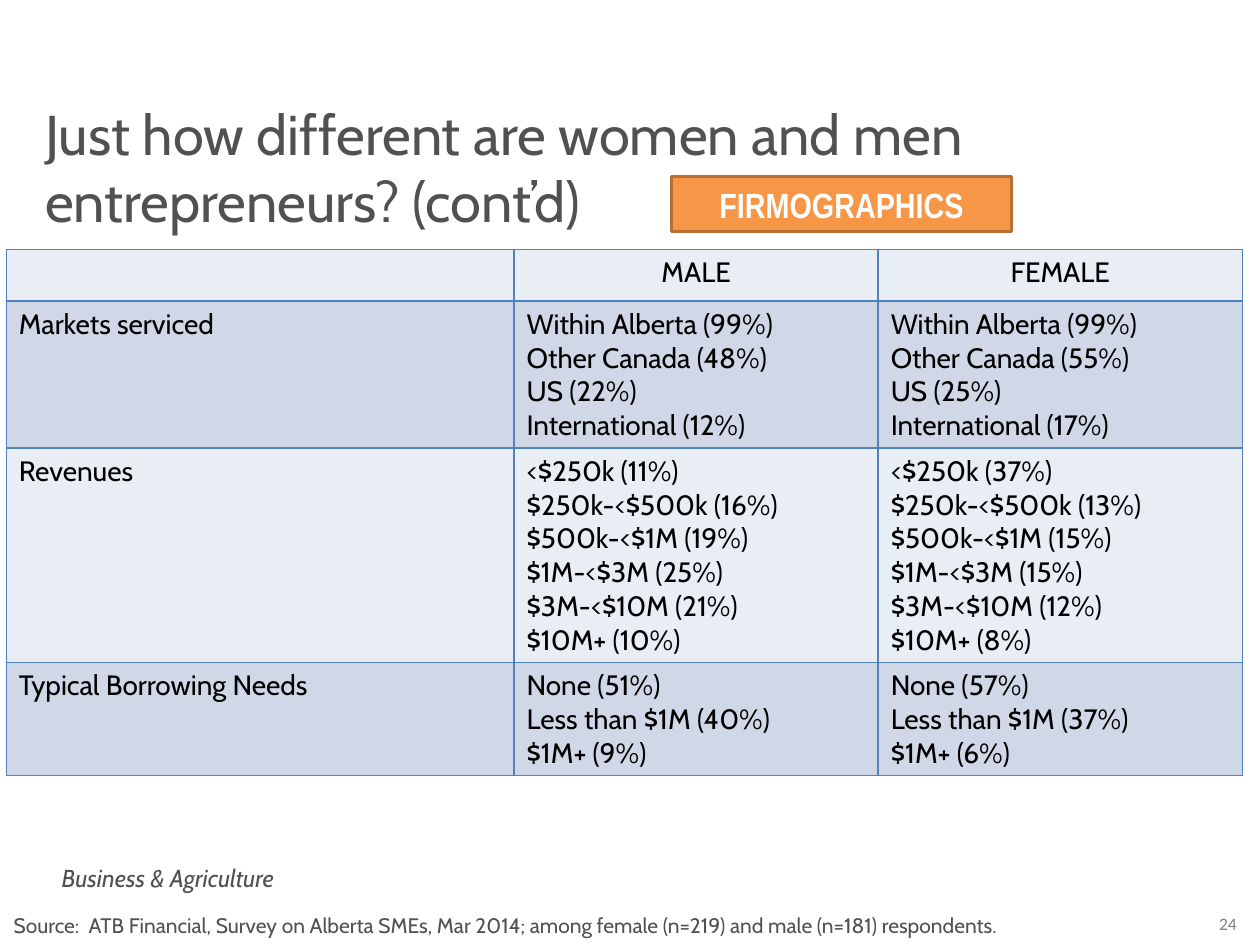
from dataclasses import dataclass

from lxml.etree import SubElement
from pptx import Presentation
from pptx.dml.color import RGBColor
from pptx.enum.shapes import MSO_SHAPE
from pptx.enum.text import MSO_ANCHOR, MSO_AUTO_SIZE, PP_ALIGN
from pptx.oxml.ns import qn
from pptx.util import Emu, Pt

PX = 9144
GREY = "505150"
BORDER = "4F81BD"
BANDS = ("E9EDF4", "D0D8E8")
COLUMN_WIDTHS = (403, 289, 289)


@dataclass
class Label:
    text: str
    left: int
    top: int
    width: int
    height: int
    size: int
    color: str = GREY
    font: str = "Cabin"
    italic: bool = False
    align: PP_ALIGN = PP_ALIGN.LEFT


@dataclass
class Row:
    height: int
    heading: str
    male: tuple[str, ...]
    female: tuple[str, ...]
    align: PP_ALIGN = PP_ALIGN.LEFT


def shares(names: tuple[str, ...], values: tuple[int, ...]) -> tuple[str, ...]:
    return tuple(f"{name} ({value}%)" for name, value in zip(names, values))


MARKETS = ("Within Alberta", "Other Canada", "US", "International")
REVENUES = ("<$250k", "$250k-<$500k", "$500k-<$1M", "$1M-<$3M", "$3M-<$10M", "$10M+")
BORROWING = ("None", "Less than $1M", "$1M+")

ROWS = (
    Row(41, "", ("MALE",), ("FEMALE",), PP_ALIGN.CENTER),
    Row(116, "Markets serviced",
        shares(MARKETS, (99, 48, 22, 12)), shares(MARKETS, (99, 55, 25, 17))),
    Row(170, "Revenues",
        shares(REVENUES, (11, 16, 19, 25, 21, 10)),
        shares(REVENUES, (37, 13, 15, 15, 12, 8))),
    Row(90, "Typical Borrowing Needs",
        shares(BORROWING, (51, 40, 9)), shares(BORROWING, (57, 37, 6))),
)

LABELS = (
    Label("24", 950, 720, 49, 27, 10, "808080", "Calibri", align=PP_ALIGN.CENTER),
    Label("Business & Agriculture", 39, 680, 281, 34, 14, italic=True),
    Label("Just how different are women and men entrepreneurs? (cont’d)",
          26, 74, 907, 118, 32),
    Label("Source:  ATB Financial, Survey on Alberta SMEs, Mar 2014; "
          "among female (n=219) and male (n=181) respondents.",
          1, 719, 862, 30, 12),
)


def px(*lengths: int) -> list[Emu]:
    return [Emu(length * PX) for length in lengths]


def rgb(color: str) -> RGBColor:
    return RGBColor.from_string(color)


def write(frame, *lines: str, size: int, color: str = "000000", font: str = "Cabin",
          bold: bool = False, italic: bool = False,
          align: PP_ALIGN = PP_ALIGN.LEFT) -> None:
    for index, line in enumerate(lines):
        para = frame.add_paragraph() if index else frame.paragraphs[0]
        para.alignment = align
        span = para.add_run()
        span.text = line
        span.font.name = font
        span.font.size = Pt(size)
        span.font.bold = bold
        span.font.italic = italic
        span.font.color.rgb = rgb(color)


def draw_label(page, label: Label) -> None:
    box = page.shapes.add_textbox(*px(label.left, label.top, label.width, label.height))
    frame = box.text_frame
    frame.word_wrap = True
    frame.auto_size = MSO_AUTO_SIZE.SHAPE_TO_FIT_TEXT
    write(frame, label.text, size=label.size, color=label.color, font=label.font,
          italic=label.italic, align=label.align)


def draw_badge(page) -> None:
    badge = page.shapes.add_shape(MSO_SHAPE.RECTANGLE, *px(533, 140, 270, 44))
    badge.shadow.inherit = False
    badge.fill.solid()
    badge.fill.fore_color.rgb = rgb("F79646")
    badge.line.color.rgb = rgb("B76F34")
    badge.line.width = Pt(1.5)
    frame = badge.text_frame
    frame.word_wrap = True
    frame.vertical_anchor = MSO_ANCHOR.MIDDLE
    write(frame, "FIRMOGRAPHICS", size=20, color="FFFFFF", font="Arial Narrow",
          bold=True, align=PP_ALIGN.CENTER)


def style_cell(cell, fill: str) -> None:
    properties = cell._tc.get_or_add_tcPr()
    for side in ("a:lnL", "a:lnR", "a:lnT", "a:lnB"):
        line = SubElement(properties, qn(side), w=str(Pt(1)))
        SubElement(SubElement(line, qn("a:solidFill")), qn("a:srgbClr"), val=BORDER)
    cell.fill.solid()
    cell.fill.fore_color.rgb = rgb(fill)


def draw_table(page, rows: tuple[Row, ...]) -> None:
    size = px(5, 198, sum(COLUMN_WIDTHS), sum(row.height for row in rows))
    table = page.shapes.add_table(len(rows), len(COLUMN_WIDTHS), *size).table
    for column, width in zip(table.columns, px(*COLUMN_WIDTHS)):
        column.width = width
    for index, row in enumerate(rows):
        table.rows[index].height = Emu(row.height * PX)
        heading = (row.heading,) if row.heading else ()
        for cell, lines in zip(table.rows[index].cells, (heading, row.male, row.female)):
            style_cell(cell, BANDS[index % 2])
            write(cell.text_frame, *lines, size=16, align=row.align)


def main() -> None:
    deck = Presentation()
    deck.slide_width, deck.slide_height = px(1000, 750)
    page = deck.slides.add_slide(deck.slide_layouts[6])
    for label in LABELS:
        draw_label(page, label)
    draw_badge(page)
    draw_table(page, ROWS)
    deck.save("out.pptx")


if __name__ == "__main__":
    main()
